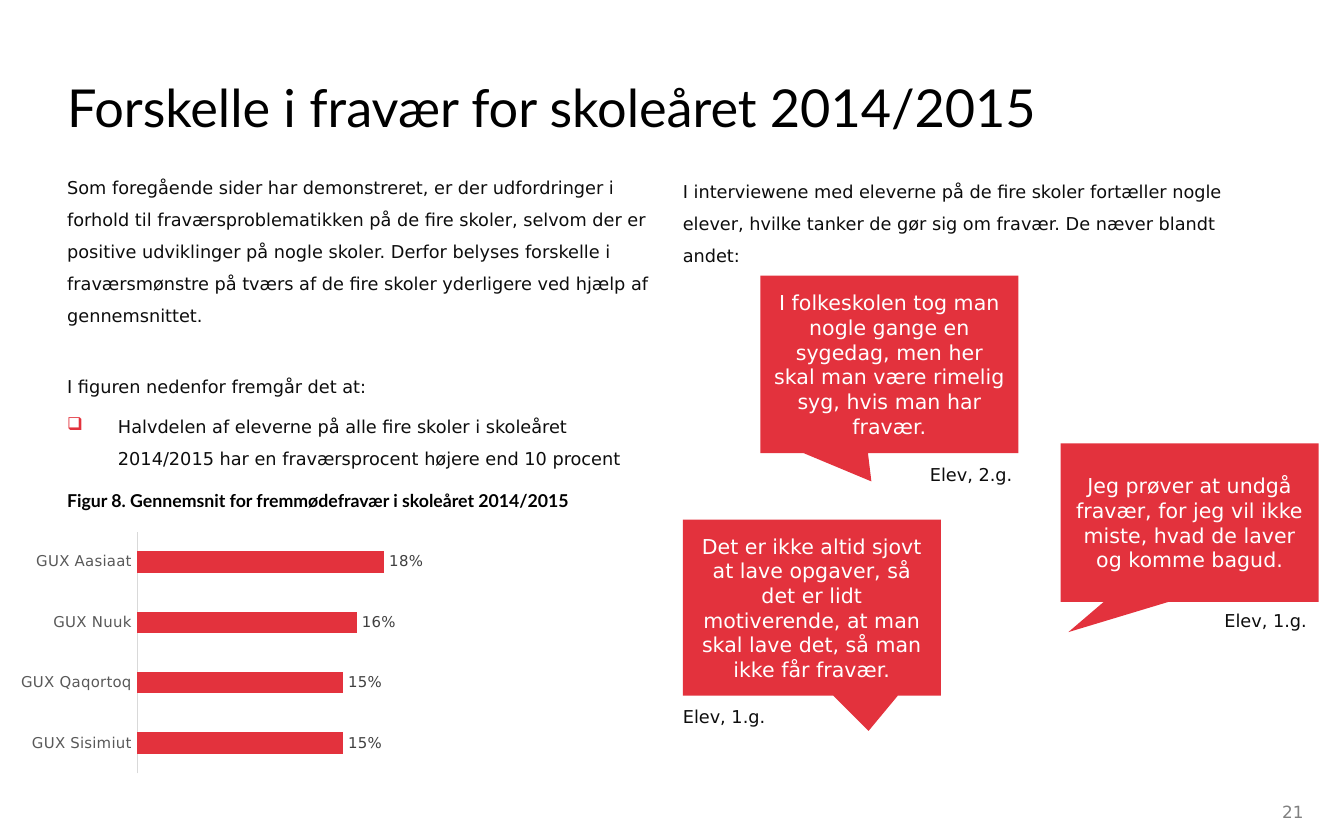
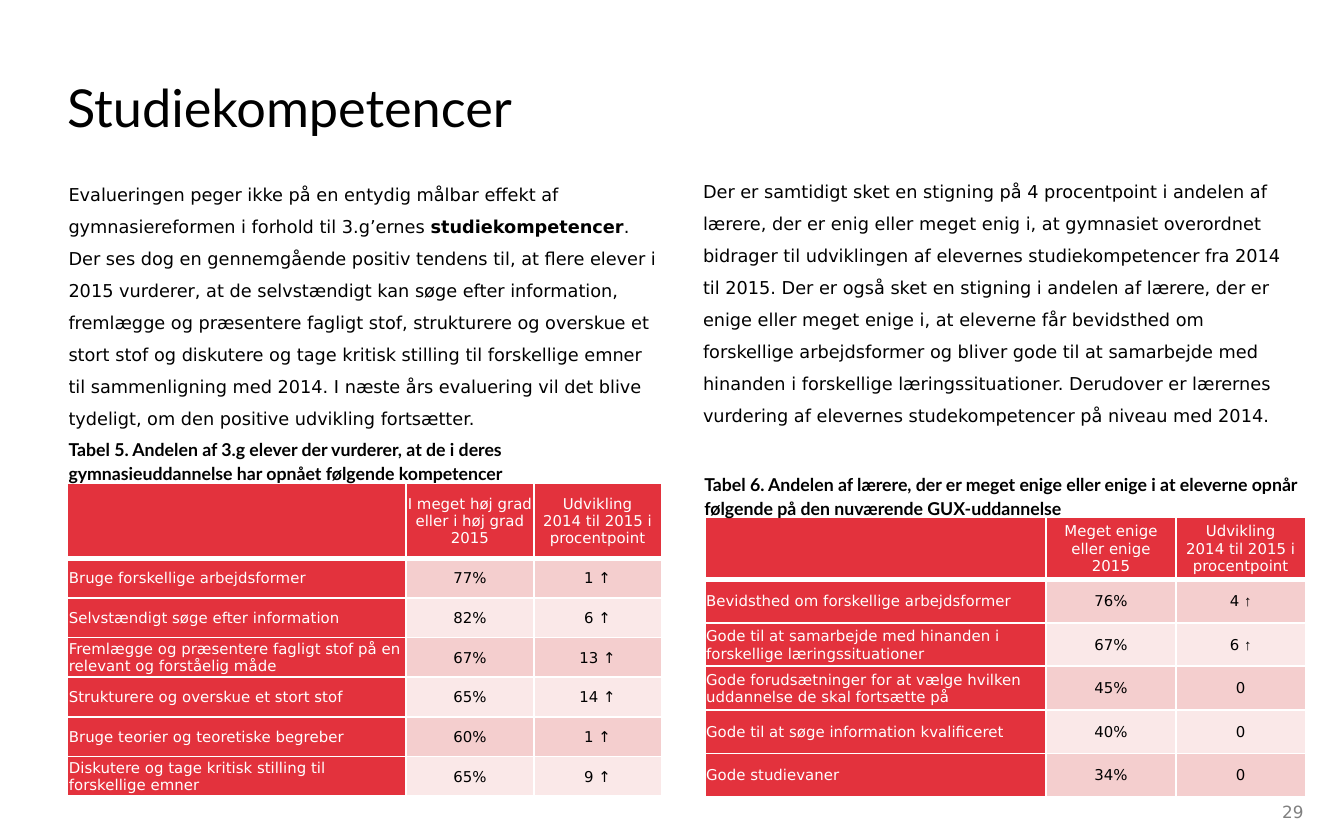
from dataclasses import dataclass
from typing import NamedTuple

from lxml import etree
from pptx import Presentation
from pptx.chart.data import CategoryChartData
from pptx.dml.color import RGBColor
from pptx.enum.chart import XL_CHART_TYPE, XL_LABEL_POSITION, XL_TICK_MARK
from pptx.enum.shapes import MSO_SHAPE
from pptx.enum.text import MSO_ANCHOR, PP_ALIGN
from pptx.oxml import parse_xml
from pptx.oxml.ns import nsdecls, qn
from pptx.util import Pt

BAR_CLUSTERED = XL_CHART_TYPE.BAR_CLUSTERED
OUTSIDE_END = XL_LABEL_POSITION.OUTSIDE_END
NO_TICK = XL_TICK_MARK.NONE
CALLOUT = MSO_SHAPE.RECTANGULAR_CALLOUT
MIDDLE = MSO_ANCHOR.MIDDLE
TOP = MSO_ANCHOR.TOP
CENTER = PP_ALIGN.CENTER
LEFT = PP_ALIGN.LEFT

COLORS = {
    "red": "E3323D",
    "pink": "F4CECE",
    "pale": "FAE8E8",
    "white": "FFFFFF",
    "black": "000000",
    "ink": "0D0D0D",
    "page": "808080",
    "axis": "D9D9D9",
    "category": "595959",
    "value": "404040",
}
SANS = "DejaVu Sans"
HEADING = "Lato"


class Box(NamedTuple):
    left: float
    top: float
    width: float
    height: float

    def lengths(self) -> list:
        return [Pt(value) for value in self]


class Style(NamedTuple):
    size: float
    color: str
    font: str = SANS
    bold: bool = False
    line: float = 1.0
    gap: float = 0


TITLE = Style(28, "black", HEADING)
BODY = Style(9.5, "ink", line=1.5, gap=2)
BLACK_BODY = BODY._replace(color="black")
CAPTION = Style(9.5, "black", HEADING, True, 1.14, 2)
PAGE_NUMBER = Style(9, "page", line=1.2, gap=2)
QUOTE = Style(11, "white")
CELL = Style(8, "black")


@dataclass
class Para:
    text: str
    before: float = 2
    bullet: bool = False
    bold_part: str = ""


@dataclass
class Note:
    box: Box
    paras: list[Para]
    style: Style = BODY


@dataclass
class Quote:
    box: Box
    text: str
    tip: tuple[float, float]


@dataclass
class Grid:
    box: Box
    label_width: float
    header_height: float
    rows: list[tuple[str, str, str]]
    arrow_font: str = SANS


def rgb(name: str) -> RGBColor:
    return RGBColor.from_string(COLORS[name])


def style_font(font, style: Style) -> None:
    font.name = style.font
    font.size = Pt(style.size)
    font.bold = style.bold
    font.color.rgb = rgb(style.color)


def add_bullet(para) -> None:
    properties = para._p.get_or_add_pPr()
    properties.set("marL", str(Pt(27.2)))
    properties.set("indent", str(Pt(-27.2)))
    color = etree.SubElement(properties, qn("a:buClr"))
    etree.SubElement(color, qn("a:srgbClr"), val=COLORS["red"])
    etree.SubElement(properties, qn("a:buChar"), char="❑")


def add_note(page, note: Note, anchor=TOP) -> None:
    frame = page.shapes.add_textbox(*note.box.lengths()).text_frame
    frame.word_wrap = True
    frame.vertical_anchor = anchor
    frame.margin_left = frame.margin_right = 0
    frame.margin_top = frame.margin_bottom = 0
    frame.text = "\n".join(para.text for para in note.paras)
    for index, (para, content) in enumerate(zip(frame.paragraphs, note.paras)):
        if content.bullet:
            add_bullet(para)
        para.line_spacing = note.style.line
        para.space_before = Pt(content.before if index else 0)
        para.space_after = Pt(note.style.gap)
        if content.bold_part:
            start, end = content.text.split(content.bold_part)
            para.text = start
            para.add_run().text = content.bold_part
            para.add_run().text = end
        for span in para.runs:
            style_font(span.font, note.style)
            span.font.bold = note.style.bold or span.text == content.bold_part


def add_quote(page, quote: Quote) -> None:
    shape = page.shapes.add_shape(CALLOUT, *quote.box.lengths())
    shape.shadow.inherit = False
    shape.adjustments[0], shape.adjustments[1] = quote.tip
    shape.fill.solid()
    shape.fill.fore_color.rgb = rgb("red")
    shape.line.fill.background()
    frame = shape.text_frame
    frame.word_wrap = True
    frame.vertical_anchor = MIDDLE
    frame.text = quote.text
    para = frame.paragraphs[0]
    para.alignment = CENTER
    style_font(para.runs[0].font, QUOTE)


def add_absence_chart(page, box: Box, values: dict[str, float]) -> None:
    data = CategoryChartData(number_format="0%")
    data.categories = list(values)
    data.add_series("Series 1", list(values.values()))
    chart = page.shapes.add_chart(BAR_CLUSTERED, *box.lengths(), data).chart
    chart.has_legend = False
    chart.has_title = False
    style_font(chart.font, CELL)
    plot = chart.plots[0]
    plot.gap_width = 182
    plot.vary_by_categories = False
    fill = plot.series[0].format.fill
    fill.solid()
    fill.fore_color.rgb = rgb("red")
    plot.has_data_labels = True
    labels = plot.data_labels
    labels.show_value = True
    labels.number_format = "0%"
    labels.number_format_is_linked = False
    labels.position = OUTSIDE_END
    style_font(labels.font, CELL._replace(color="value"))
    categories = chart.category_axis
    categories.major_tick_mark = NO_TICK
    categories.format.line.color.rgb = rgb("axis")
    categories.format.line.width = Pt(0.75)
    style_font(categories.tick_labels.font, CELL._replace(color="category"))
    scale = chart.value_axis
    scale.minimum_scale = -0.03
    scale.maximum_scale = 0.22
    scale.has_major_gridlines = False
    scale.visible = False
    area = chart._chartSpace.chart.plotArea
    for layout in area.findall(qn("c:layout")):
        area.remove(layout)
    area.insert(0, parse_xml(
        f'<c:layout {nsdecls("c")}><c:manualLayout><c:layoutTarget val="inner"/>'
        '<c:xMode val="edge"/><c:yMode val="edge"/><c:x val="0.31"/><c:y val="0.08"/>'
        '<c:w val="0.61"/><c:h val="0.86"/></c:manualLayout></c:layout>'))


def set_borders(cell, widths: dict[str, float]) -> None:
    properties = cell._tc.get_or_add_tcPr()
    for index, (side, width) in enumerate(widths.items()):
        properties.insert(index, parse_xml(
            f'<a:ln{side} {nsdecls("a")} w="{Pt(width)}"><a:solidFill>'
            f'<a:srgbClr val="{COLORS["white"]}"/></a:solidFill></a:ln{side}>'))


def fill_cell(cell, text: str, row: int, column: int, arrow_font: str) -> None:
    is_label = row == 0 or column == 0
    cell.fill.solid()
    cell.fill.fore_color.rgb = rgb("red" if is_label else "pink" if row % 2 else "pale")
    set_borders(cell, {"L": 1, "R": 1, "T": 3 if row == 1 else 1, "B": 1 if row else 3})
    cell.vertical_anchor = MIDDLE
    cell.margin_left = cell.margin_right = cell.margin_top = Pt(0.7)
    cell.margin_bottom = 0
    cell.text_frame.text = text
    for para in cell.text_frame.paragraphs:
        para.alignment = CENTER if row == 0 or column else LEFT
        if text.endswith("↑"):
            para.text = text[:-1]
            para.add_run().text = "↑"
        for span in para.runs:
            font = arrow_font if span.text == "↑" else SANS
            style_font(span.font, Style(8, "white" if is_label else "black", font))


def add_grid(page, grid: Grid) -> None:
    count = len(grid.rows)
    table = page.shapes.add_table(count, 3, *grid.box.lengths()).table
    value_width = (grid.box.width - grid.label_width) / 2
    for column, width in zip(table.columns, (grid.label_width, value_width, value_width)):
        column.width = Pt(width)
    row_height = (grid.box.height - grid.header_height) / (count - 1)
    for row, texts in enumerate(grid.rows):
        table.rows[row].height = Pt(row_height if row else grid.header_height)
        for column, text in enumerate(texts):
            fill_cell(table.cell(row, column), text, row, column, grid.arrow_font)


def add_page(deck, title: str, number: str):
    page = deck.slides.add_slide(deck.slide_layouts[6])
    add_note(page, Note(Box(36, 40.3, 648, 42.5), [Para(title)], TITLE))
    add_note(page, Note(Box(686.9, 430.6, 18, 6.5), [Para(number)], PAGE_NUMBER), MIDDLE)
    return page


ABSENCE_NOTES = [
    Note(Box(36, 89.3, 317.5, 328.3), [
        Para("Som foregående sider har demonstreret, er der udfordringer i forhold til fraværsproblematikken på de fire skoler, selvom der er positive udviklinger på nogle skoler. Derfor belyses forskelle i fraværsmønstre på tværs af de fire skoler yderligere ved hjælp af gennemsnittet."),
        Para("I figuren nedenfor fremgår det at:", before=19),
        Para("Halvdelen af eleverne på alle fire skoler i skoleåret 2014/2015 har en fraværsprocent højere end 10 procent", bullet=True)]),
    Note(Box(36, 260.6, 319.7, 13), [Para("Figur 8. Gennemsnit for fremmødefravær i skoleåret 2014/2015")], CAPTION),
    Note(Box(365.8, 91.4, 308.2, 36.7), [Para("I interviewene med eleverne på de fire skoler fortæller nogle elever, hvilke tanker de gør sig om fravær. De næver blandt andet:")]),
    Note(Box(498.2, 242.6, 47.5, 18), [Para("Elev, 2.g.")]),
    Note(Box(655.9, 321.1, 150.5, 20.2), [Para("Elev, 1.g.")]),
    Note(Box(365.8, 372.2, 150.5, 20.2), [Para("Elev, 1.g.")]),
]
QUOTES = [
    Quote(Box(407.4, 147.7, 138.2, 95), "I folkeskolen tog man nogle gange en sygedag, men her skal man være rimelig syg, hvis man har fravær.", (-0.07, 0.66)),
    Quote(Box(568.2, 237.5, 138.2, 85), "Jeg prøver at undgå fravær, for jeg vil ikke miste, hvad de laver og komme bagud.", (-0.47, 0.69)),
    Quote(Box(365.8, 278.4, 138.2, 94.3), "Det er ikke altid sjovt at lave opgaver, så det er lidt motiverende, at man skal lave det, så man ikke får fravær.", (0.22, 0.7)),
]
ABSENCE = {"GUX Sisimiut": 0.15, "GUX Qaqortoq": 0.15, "GUX Nuuk": 0.16, "GUX Aasiaat": 0.18}

SKILL_NOTES = [
    Note(Box(36.7, 92.9, 317.5, 162), [Para("Evalueringen peger ikke på en entydig målbar effekt af gymnasiereformen i forhold til 3.g’ernes studiekompetencer. Der ses dog en gennemgående positiv tendens til, at flere elever i 2015 vurderer, at de selvstændigt kan søge efter information, fremlægge og præsentere fagligt stof, strukturere og overskue et stort stof og diskutere og tage kritisk stilling til forskellige emner til sammenligning med 2014. I næste års evaluering vil det blive tydeligt, om den positive udvikling fortsætter.", bold_part="studiekompetencer")], BLACK_BODY),
    Note(Box(376.6, 91.4, 317.5, 142.6), [Para("Der er samtidigt sket en stigning på 4 procentpoint i andelen af lærere, der er enig eller meget enig i, at gymnasiet overordnet bidrager til udviklingen af elevernes studiekompetencer fra 2014 til 2015. Der er også sket en stigning i andelen af lærere, der er enige eller meget enige i, at eleverne får bevidsthed om forskellige arbejdsformer og bliver gode til at samarbejde med hinanden i forskellige læringssituationer. Derudover er lærernes vurdering af elevernes studekompetencer på niveau med 2014.")], BLACK_BODY),
    Note(Box(36.7, 233.3, 306, 25.9), [Para("Tabel 5. Andelen af 3.g elever der vurderer, at de i deres gymnasieuddannelse har opnået følgende kompetencer")], CAPTION),
    Note(Box(377.3, 252, 330.5, 25.9), [Para("Tabel 6. Andelen af lærere, der er meget enige eller enige i at eleverne opnår følgende på den nuværende GUX-uddannelse")], CAPTION),
]
CHANGE = "Udvikling\v2014 til 2015 i procentpoint"
GRIDS = [
    Grid(Box(36.2, 258.8, 318.2, 167.8), 181.4, 40.3, [
        ("", "I meget høj grad eller i høj grad 2015", CHANGE),
        ("Bruge forskellige arbejdsformer", "77%", "1 ↑"),
        ("Selvstændigt søge efter information", "82%", "6 ↑"),
        ("Fremlægge og præsentere fagligt stof på en relevant og forståelig måde", "67%", "13 ↑"),
        ("Strukturere og overskue et stort stof", "65%", "14 ↑"),
        ("Bruge teorier og teoretiske begreber", "60%", "1 ↑"),
        ("Diskutere og tage kritisk stilling til forskellige emner", "65%", "9 ↑")]),
    Grid(Box(377.6, 277.2, 321.8, 149.8), 182.9, 33.1, [
        ("", "Meget enige eller enige\n2015", CHANGE),
        ("Bevidsthed om forskellige arbejdsformer", "76%", "4 ↑"),
        ("Gode til at samarbejde med hinanden i forskellige læringssituationer", "67%", "6 ↑"),
        ("Gode forudsætninger for at vælge hvilken uddannelse de skal fortsætte på", "45%", "0"),
        ("Gode til at søge information kvalificeret", "40%", "0"),
        ("Gode studievaner", "34%", "0")], "Arial"),
]


def main() -> None:
    deck = Presentation()
    deck.slide_width, deck.slide_height = Pt(720), Pt(450)
    absence = add_page(deck, "Forskelle i fravær for skoleåret 2014/2015", "21")
    add_absence_chart(absence, Box(-41.8, 272.9, 301, 150.5), ABSENCE)
    for quote in QUOTES:
        add_quote(absence, quote)
    for note in ABSENCE_NOTES:
        add_note(absence, note)
    skills = add_page(deck, "Studiekompetencer", "29")
    for grid in GRIDS:
        add_grid(skills, grid)
    for note in SKILL_NOTES:
        add_note(skills, note)
    deck.save("out.pptx")


if __name__ == "__main__":
    main()
